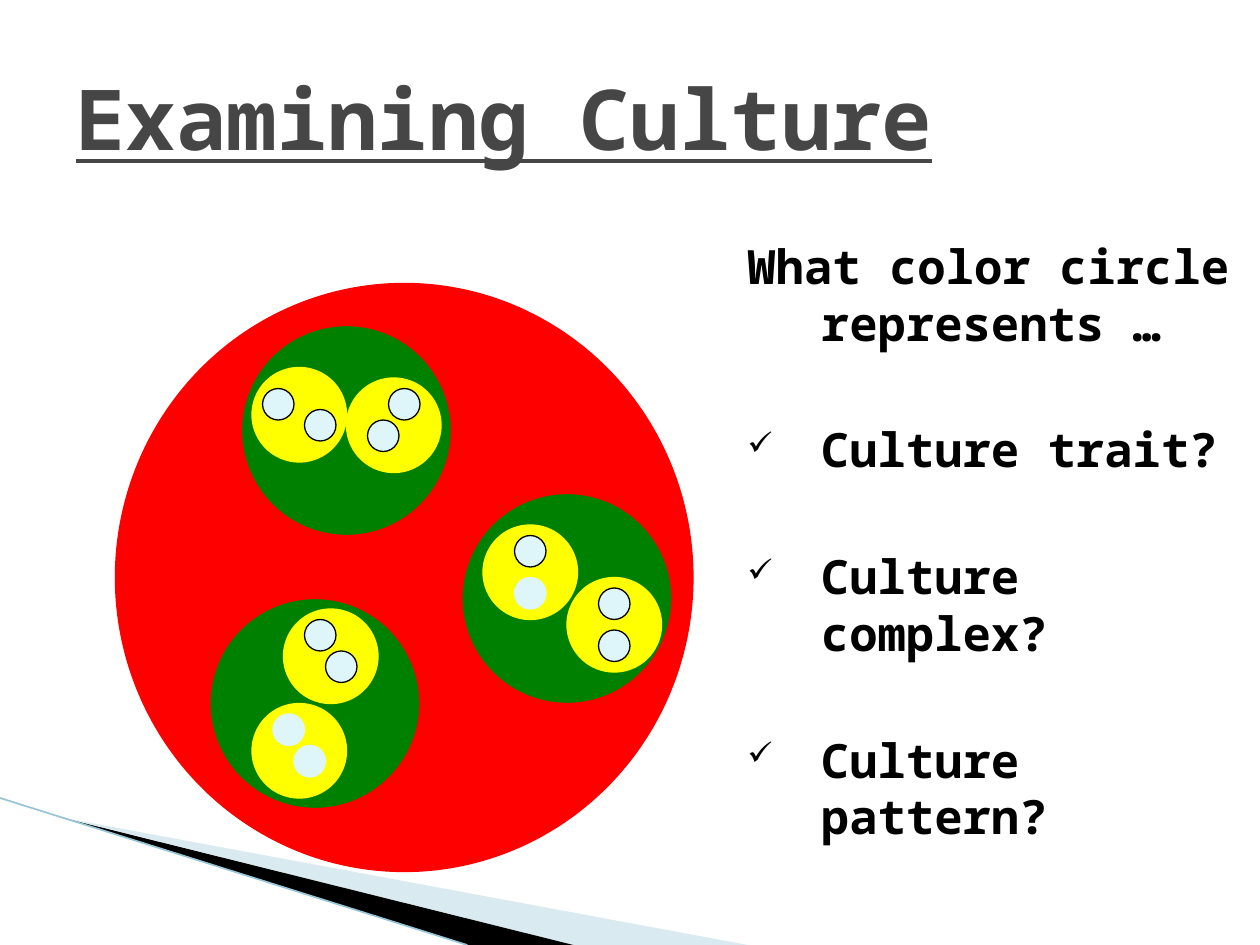
import pptx
import pptx.util
import pptx.dml.color
import pptx.enum.shapes
import pptx.enum.text
import pptx.oxml
import pptx.oxml.ns

INK = {
    "red": "FF0000", "green": "008000", "yellow": "FFFF00", "pale": "DEF5FA",
    "black": "000000", "title": "464646", "band": "A0CBDC", "edge": "97C5D8",
}
FONT = "Noto Sans Mono"
WIDE, HIGH = pptx.util.Inches(10), pptx.util.Inches(7.5)
COLS, ROWS = 120, 90

GREENS = [(23, 31), (20, 57), (44, 47)]
YELLOWS = [(24, 67), (27, 58), (24, 35), (33, 36), (46, 50), (54, 55)]
RINGED = [(25, 37), (29, 39), (35, 40), (37, 37), (49, 51),
          (57, 60), (57, 56), (31, 62), (29, 59)]
PLAIN = [(49, 55), (28, 71), (26, 68)]
ASKS = ["Culture trait?", "Culture complex?", "Culture pattern?"]


def across(col):
    return round(WIDE * col / COLS)


def down(row):
    return round(HIGH * row / ROWS)


def box(col, row, cols, rows):
    return across(col), down(row), across(cols), down(rows)


def tint(name):
    return pptx.dml.color.RGBColor.from_string(INK[name])


def paint(shape, name):
    shape.shadow.inherit = False
    shape.fill.solid()
    shape.fill.fore_color.rgb = tint(name)


def style(para, size, name):
    para.alignment = pptx.enum.text.PP_ALIGN.LEFT
    for run in para.runs:
        run.font.name = FONT
        run.font.size = pptx.util.Pt(size)
        run.font.bold = True
        run.font.color.rgb = tint(name)


def add_disc(slide, spot, cols, rows, fill, edge):
    disc = slide.shapes.add_shape(
        pptx.enum.shapes.MSO_SHAPE.OVAL, *box(*spot, cols, rows))
    paint(disc, fill)
    disc.line.color.rgb = tint(edge)
    disc.line.width = pptx.util.Pt(0.75)


def add_wedge(slide, points, name, alpha=100):
    spots = [(across(col), down(row)) for col, row in points]
    form = slide.shapes.build_freeform(*spots[0])
    form.add_line_segments(spots[1:], close=True)
    wedge = form.convert_to_shape()
    paint(wedge, name)
    wedge.line.fill.background()
    if alpha < 100:
        color = wedge.fill._xPr.find(".//" + pptx.oxml.ns.qn("a:srgbClr"))
        mark = pptx.oxml.parse_xml(
            f'<a:alpha {pptx.oxml.ns.nsdecls("a")} val="{alpha * 1000}"/>')
        color.append(mark)


def add_edge(slide, start, end):
    edge = slide.shapes.add_connector(
        pptx.enum.shapes.MSO_CONNECTOR.STRAIGHT,
        across(start[0]), down(start[1]), across(end[0]), down(end[1]))
    edge.line.color.rgb = tint("edge")
    edge.line.width = pptx.util.Pt(0.95)
    edge._element.spPr.append(pptx.oxml.parse_xml(
        f'<a:effectLst {pptx.oxml.ns.nsdecls("a")}/>'))


def set_title(slide, text):
    title = slide.shapes.title
    title.left, title.top, title.width, title.height = box(6, 3.6, 108, 15)
    frame = title.text_frame
    frame.text = text
    frame.auto_size = pptx.enum.text.MSO_AUTO_SIZE.NONE
    frame.vertical_anchor = pptx.enum.text.MSO_ANCHOR.MIDDLE
    para = frame.paragraphs[0]
    style(para, 48, "title")
    para.runs[0].font.underline = True


def indent(para):
    props = para._p.get_or_add_pPr()
    hang = across(7)
    props.set("marL", str(hang))
    props.set("indent", str(-hang))
    return props


def add_check(para):
    props = indent(para)
    space = pptx.oxml.ns.nsdecls("a")
    for part in (
        f'<a:buClr {space}><a:srgbClr val="{INK["black"]}"/></a:buClr>',
        f'<a:buSzPct {space} val="68000"/>',
        f'<a:buChar {space} char="✓"/>',
    ):
        props.append(pptx.oxml.parse_xml(part))


def add_asks(slide, lead, asks):
    frame = slide.shapes.add_textbox(*box(70, 22, 50, 62)).text_frame
    frame.word_wrap = True
    frame.text = lead
    indent(frame.paragraphs[0])
    for ask in asks:
        para = frame.add_paragraph()
        para.text = ask
        add_check(para)
        para.space_before = pptx.util.Pt(40)
    for para in frame.paragraphs:
        style(para, 27, "black")


def main():
    deck = pptx.Presentation()
    deck.slide_width, deck.slide_height = WIDE, HIGH
    slide = deck.slides.add_slide(deck.slide_layouts[5])

    add_wedge(slide, [(6.6, 78), (71.2, 90), (54.6, 90)], "band", 40)
    add_wedge(slide, [(6.4, 78), (54.6, 90), (44.6, 90)], "black")
    add_edge(slide, (0, 76), (44.5, 90))

    set_title(slide, "Examining Culture")
    add_asks(slide, "What color circle represents …", ASKS)

    add_disc(slide, (11, 27), 55, 56, "red", "red")
    for spots, size, fill, edge in (
        (GREENS, 20, "green", "red"),
        (YELLOWS, 9, "yellow", "yellow"),
        (RINGED, 3, "pale", "black"),
        (PLAIN, 3, "pale", "pale"),
    ):
        for spot in spots:
            add_disc(slide, spot, size, size, fill, edge)

    deck.save("out.pptx")


if __name__ == "__main__":
    main()
